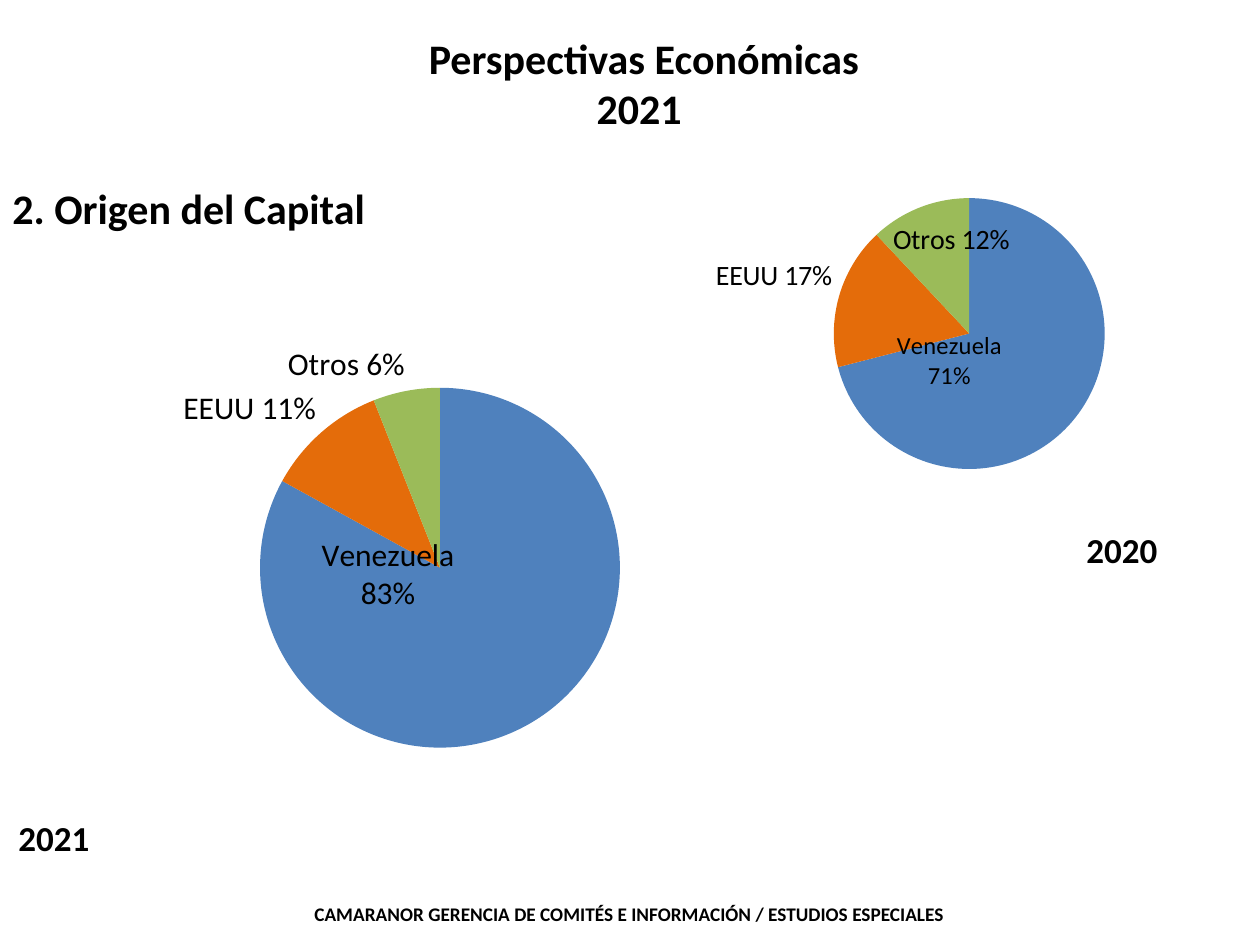
import pptx
import pptx.chart.data
import pptx.dml.color
import pptx.enum.chart
import pptx.enum.text
import pptx.oxml
import pptx.oxml.ns
import pptx.util

PX = pptx.util.Inches(1) / 126
RGB = pptx.dml.color.RGBColor
BLACK = RGB(0x00, 0x00, 0x00)
BLUE = RGB(0x4F, 0x81, 0xBD)
ORANGE = RGB(0xE4, 0x6C, 0x0A)
GREEN = RGB(0x9B, 0xBB, 0x59)
NAMES = ("Venezuela", "EEUU", "Otros")
ALIGN = pptx.enum.text.PP_ALIGN
OUTER = pptx.enum.chart.XL_LABEL_POSITION.OUTSIDE_END


def scale(*lens):
    return [round(n * PX) for n in lens]


def style(font, size, bold=True):
    form = {"name": "Calibri", "size": pptx.util.Pt(size), "bold": bold}
    for key, val in form.items():
        setattr(font, key, val)
    font.color.rgb = BLACK


def fill_text(shape, lines, size, align=ALIGN.LEFT):
    frame = shape.text_frame
    form = {
        "text": "\n".join(lines),
        "word_wrap": True,
        "auto_size": pptx.enum.text.MSO_AUTO_SIZE.NONE,
        "vertical_anchor": pptx.enum.text.MSO_ANCHOR.TOP,
    }
    for key, val in form.items():
        setattr(frame, key, val)
    for para in frame.paragraphs:
        para.alignment = align
        for run in para.runs:
            style(run.font, size)


def add_title(slide, lines, box):
    title = slide.shapes.title
    for key, val in zip(("left", "top", "width", "height"), scale(*box)):
        setattr(title, key, val)
    fill_text(title, lines, 24, ALIGN.CENTER)


def add_text(slide, text, size, box):
    fill_text(slide.shapes.add_textbox(*scale(*box)), [text], size)


def make_layout(parts):
    tags = "".join(f'<c:{key} val="{val}"/>' for key, val in parts.items())
    return pptx.oxml.parse_xml(
        f'<c:layout {pptx.oxml.ns.nsdecls("c")}>'
        f"<c:manualLayout>{tags}</c:manualLayout></c:layout>")


def place_pie(chart, box, pie):
    """Fix the pie, given as left, top and side on the slide."""
    left, top, wide, high = box
    x, y, side = pie
    parts = {
        "layoutTarget": "inner", "xMode": "edge", "yMode": "edge",
        "x": round((x - left) / wide, 3), "y": round((y - top) / high, 3),
        "w": round(side / wide, 3), "h": round(side / high, 3),
    }
    area = chart.plots[0]._element.getparent()
    for old in area.findall(pptx.oxml.ns.qn("c:layout")):
        area.remove(old)
    area.insert(0, make_layout(parts))


def add_label(point, text, size, shift):
    label = point.data_label
    label.text_frame.text = text
    for para in label.text_frame.paragraphs:
        for run in para.runs:
            style(run.font, size, False)
    label.position = OUTER
    if shift:
        dlbl = point._element.xpath(
            f"c:dLbls/c:dLbl[c:idx/@val='{point._idx}']")[0]
        dlbl.insert(1, make_layout(dict(zip("xy", shift))))


def add_pie(slide, box, pie, vals, sizes, shifts):
    data = pptx.chart.data.CategoryChartData(number_format="0%")
    data.categories = NAMES
    data.add_series("Series 1", vals)
    kind = pptx.enum.chart.XL_CHART_TYPE.PIE
    chart = slide.shapes.add_chart(kind, *scale(*box), data).chart
    chart.has_legend = chart.has_title = False
    style(chart.font, 10, False)
    place_pie(chart, box, pie)

    # Slices and their labels
    series = chart.plots[0].series[0]
    form = {"show_value": True, "show_category_name": True,
            "number_format": "0%", "number_format_is_linked": False}
    for key, val in form.items():
        setattr(series.data_labels, key, val)
    rows = zip(NAMES, vals, (BLUE, ORANGE, GREEN), sizes, shifts)
    for i, (name, val, color, size, shift) in enumerate(rows):
        point = series.points[i]
        point.format.fill.solid()
        point.format.fill.fore_color.rgb = color
        gap = "\n" if i == 0 else " "
        add_label(point, f"{name}{gap}{val:.0%}", size, shift)


def main():
    deck = pptx.Presentation()
    deck.slide_width, deck.slide_height = scale(1260, 945)
    slide = deck.slides.add_slide(deck.slide_layouts[5])

    # Headings and footer
    add_title(slide, ["Perspectivas Económicas", "2021 "], (302, 26, 684, 115))
    add_text(slide, "2. Origen del Capital", 24, (0, 176, 640, 63))
    add_text(slide, "CAMARANOR GERENCIA DE COMITÉS E INFORMACIÓN / "
             "ESTUDIOS ESPECIALES", 11, (302, 896, 694, 34))

    # Years
    add_text(slide, "2020", 20, (1074, 522, 118, 55))
    add_text(slide, "2021", 20, (6, 810, 118, 55))

    # Pies for 2020 and 2021
    add_pie(slide, (600, 145, 713, 377), (834, 198, 271), (0.71, 0.17, 0.12),
            (14, 16, 16), ((-0.26, -0.24), None, (0.13, 0.15)))
    add_pie(slide, (20, 328, 822, 507), (260, 388, 360), (0.83, 0.11, 0.06),
            (18, 18, 18), ((-0.26, -0.38), None, None))

    deck.save("out.pptx")


if __name__ == "__main__":
    main()
